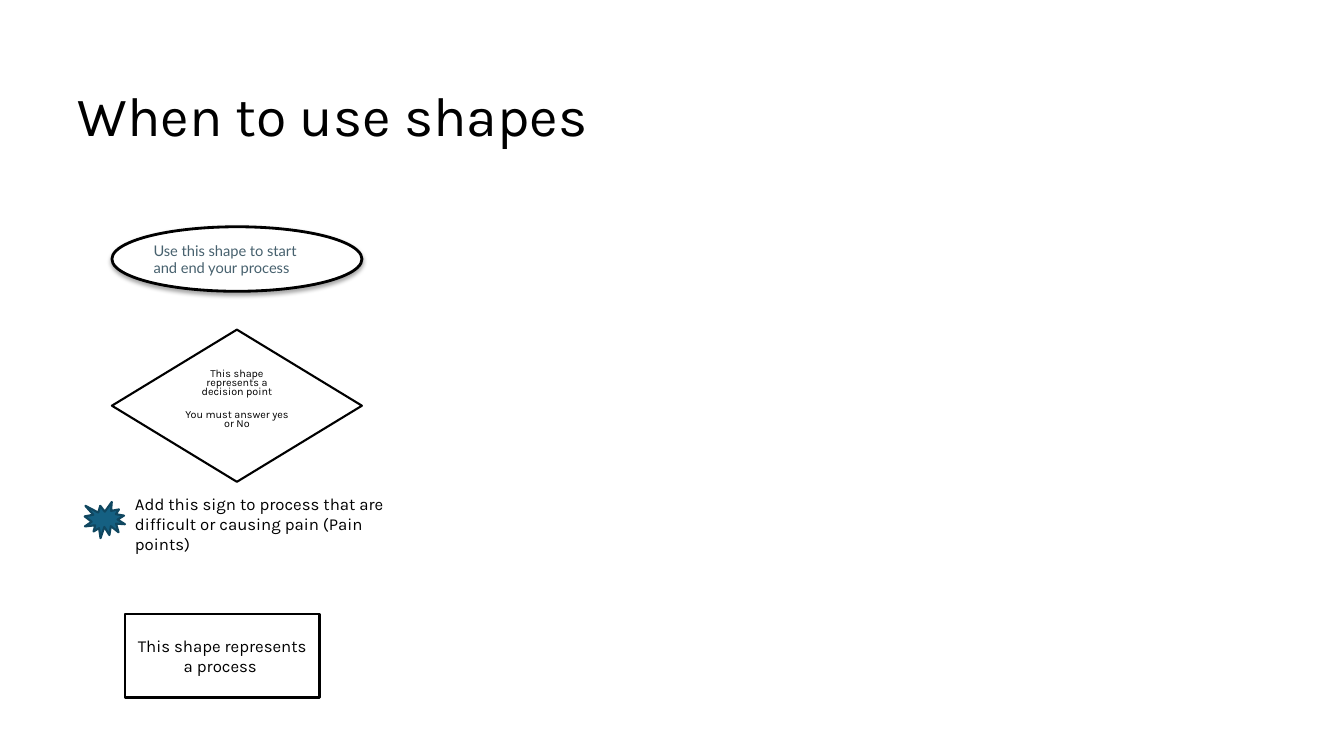
import pptx
import pptx.dml.color
import pptx.enum.shapes
import pptx.enum.text
import pptx.oxml
import pptx.oxml.ns
import pptx.util

Inches = pptx.util.Inches
Pt = pptx.util.Pt
SHAPES = pptx.enum.shapes.MSO_SHAPE
ALIGN = pptx.enum.text.PP_ALIGN
ANCHOR = pptx.enum.text.MSO_ANCHOR

COLOURS = {
    "black": "000000",
    "white": "FFFFFF",
    "burst": "156082",
    "burst_line": "104760",
    "slate": "47616E",
}


def colour(name):
    return pptx.dml.color.RGBColor.from_string(COLOURS[name])


def write_text(shape, *paragraphs, size=12, font="Karla", ink="black",
               align=ALIGN.LEFT, anchor=ANCHOR.MIDDLE, line_spacing=1.0,
               space_before=0, inset=None, bottom=None):
    frame = shape.text_frame
    frame.word_wrap = True
    frame.vertical_anchor = anchor
    if inset is not None:
        frame.margin_left = frame.margin_right = Inches(inset)
        frame.margin_top = frame.margin_bottom = Inches(inset)
    if bottom is not None:
        frame.margin_bottom = Inches(bottom)
    for index, text in enumerate(paragraphs):
        paragraph = frame.add_paragraph() if index else frame.paragraphs[0]
        paragraph.alignment = align
        paragraph.line_spacing = line_spacing
        paragraph.space_before = Pt(space_before)
        run = paragraph.add_run()
        run.text = text
        run.font.size = Pt(size)
        run.font.name = font
        run.font.color.rgb = colour(ink)


def add_symbol(slide, kind, box, fill="white", line="black", weight=1.5):
    shape = slide.shapes.add_shape(kind, *map(Inches, box))
    shape.shadow.inherit = False
    shape.fill.solid()
    shape.fill.fore_color.rgb = colour(fill)
    shape.line.color.rgb = colour(line)
    shape.line.width = Pt(weight)
    return shape


def add_soft_shadow(shape):
    effects = shape._element.spPr.find(pptx.oxml.ns.qn("a:effectLst"))
    effects.append(pptx.oxml.parse_xml(
        f'<a:outerShdw {pptx.oxml.ns.nsdecls("a")} blurRad="{Pt(3)}" '
        f'dist="{Pt(1.8)}" dir="5400000" algn="t" rotWithShape="0">'
        f'<a:srgbClr val="{COLOURS["black"]}"><a:alpha val="35000"/>'
        '</a:srgbClr></a:outerShdw>'))


def add_title(slide, box):
    title = slide.shapes.title
    title.left, title.top, title.width, title.height = map(Inches, box)
    write_text(title, "When to use shapes", size=39.6, line_spacing=0.9)


def add_decision(slide, box):
    diamond = add_symbol(slide, SHAPES.DIAMOND, box)
    write_text(diamond, "This shape represents a decision point",
               "You must answer yes or No", size=7.7, align=ALIGN.CENTER,
               line_spacing=0.7, space_before=10, bottom=0.16)


def add_pain_point(slide, box):
    left, top, width, height = box
    sign_width = 0.4
    add_symbol(slide, SHAPES.EXPLOSION1, (left, top + 0.13, sign_width, 0.36),
               fill="burst", line="burst_line")
    label = slide.shapes.add_textbox(
        *map(Inches, (left + sign_width, top, width - sign_width, height)))
    write_text(label, "Add this sign to process that are difficult or "
               "causing pain (Pain points)", anchor=ANCHOR.TOP)


def add_process(slide, box):
    rectangle = add_symbol(slide, SHAPES.RECTANGLE, box)
    write_text(rectangle, "This shape represents a process ",
               align=ALIGN.CENTER)


def add_start_end(slide, box):
    ellipse = add_symbol(slide, SHAPES.OVAL, box, weight=2)
    add_soft_shadow(ellipse)
    write_text(ellipse, "Use this shape to start and end your process",
               size=10.5, font="Lato", ink="slate", inset=0.05)


def main():
    presentation = pptx.Presentation()
    presentation.slide_width = Inches(13.33)
    presentation.slide_height = Inches(7.5)
    title_only = presentation.slide_layouts[5]
    slide = presentation.slides.add_slide(title_only)

    # Heading
    add_title(slide, (0.67, 0.85, 12, 0.66))

    # Legend of flowchart symbols, top to bottom
    add_start_end(slide, (1.11, 2.25, 2.48, 0.64))
    add_decision(slide, (1.11, 3.27, 2.48, 1.51))
    add_pain_point(slide, (0.84, 4.85, 3.13, 0.5))
    add_process(slide, (1.24, 6.09, 1.93, 0.83))

    presentation.save("out.pptx")


if __name__ == "__main__":
    main()
